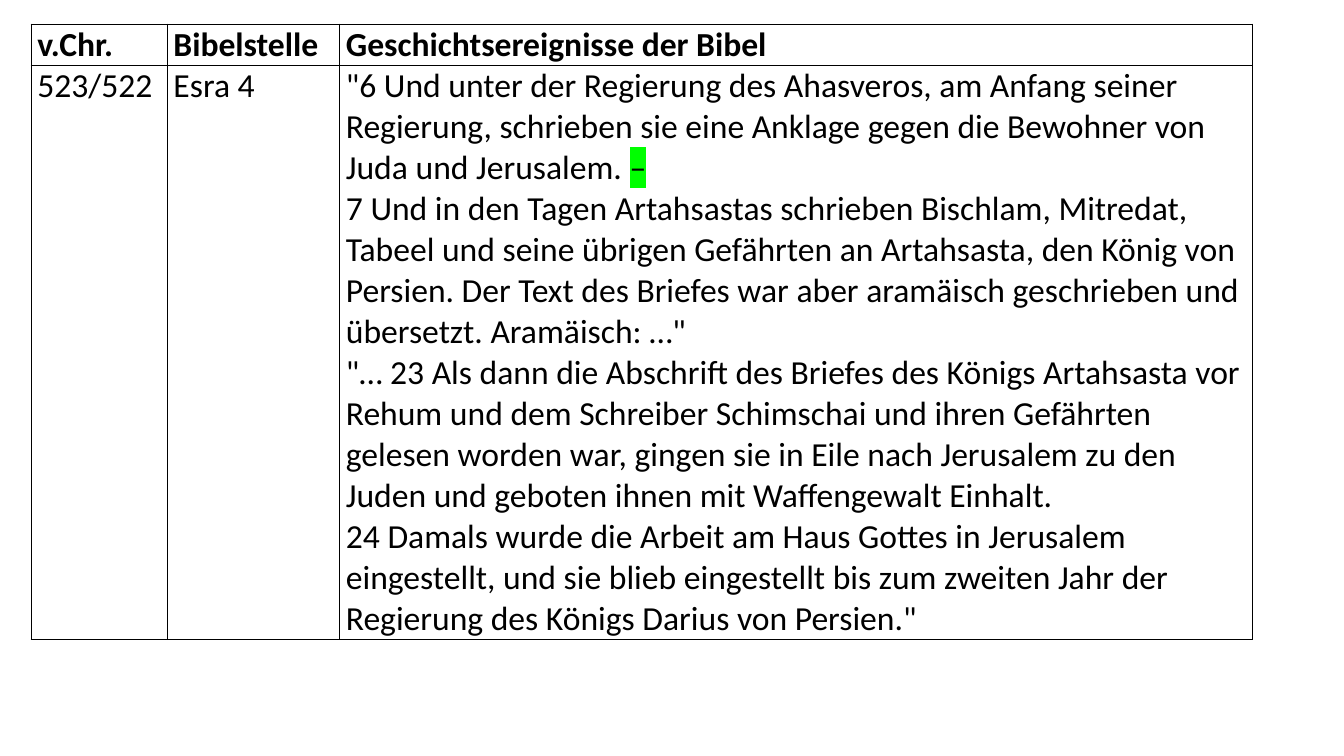
from lxml.etree import SubElement
from pptx import Presentation
from pptx.dml.color import RGBColor
from pptx.oxml.ns import qn
from pptx.util import Inches, Pt

HEADINGS = ["v.Chr.", "Bibelstelle", "Geschichtsereignisse der Bibel"]
VERSES = [
    "\"6 Und unter der Regierung des Ahasveros, am Anfang seiner Regierung, "
    "schrieben sie eine Anklage gegen die Bewohner von Juda und Jerusalem. ",
    "7 Und in den Tagen Artahsastas schrieben Bischlam, Mitredat, Tabeel und "
    "seine übrigen Gefährten an Artahsasta, den König von Persien. Der Text des "
    "Briefes war aber aramäisch geschrieben und übersetzt. Aramäisch: …\"",
    "\"… 23 Als dann die Abschrift des Briefes des Königs Artahsasta vor Rehum "
    "und dem Schreiber Schimschai und ihren Gefährten gelesen worden war, gingen "
    "sie in Eile nach Jerusalem zu den Juden und geboten ihnen mit Waffengewalt "
    "Einhalt.",
    "24 Damals wurde die Arbeit am Haus Gottes in Jerusalem eingestellt, und sie "
    "blieb eingestellt bis zum zweiten Jahr der Regierung des Königs Darius von "
    "Persien.\"",
]
EVENTS = ["523/522", "Esra 4", "\n".join(VERSES)]


def color(value):
    return RGBColor.from_string(value)


class SlideBuilder:
    font_name = "Calibri"
    font_size = Pt(24)
    ink = "000000"
    paper = "FFFFFF"
    marker = "00FF00"

    def __init__(self, presentation):
        self.width = presentation.slide_width
        self.height = presentation.slide_height
        self.slide = presentation.slides.add_slide(presentation.slide_layouts[6])

    def across(self, percent):
        return round(self.width * percent / 100)

    def down(self, percent):
        return round(self.height * percent / 100)

    def table(self, left, top, widths, heights, rows):
        shape = self.slide.shapes.add_table(
            len(rows), len(widths), self.across(left), self.down(top),
            self.across(sum(widths)), self.down(sum(heights)))
        table = shape.table
        for column, width in zip(table.columns, widths):
            column.width = self.across(width)
        for row, height in zip(table.rows, heights):
            row.height = self.down(height)
        for row_index, texts in enumerate(rows):
            for column_index, text in enumerate(texts):
                self.cell(table.cell(row_index, column_index), text, row_index == 0)
        return table

    def cell(self, cell, text, bold):
        cell.margin_left = cell.margin_right = Inches(0.06)
        cell.margin_top = cell.margin_bottom = 0
        self.borders(cell)
        cell.fill.solid()
        cell.fill.fore_color.rgb = color(self.paper)
        cell.text_frame.text = text
        for paragraph in cell.text_frame.paragraphs:
            for run in paragraph.runs:
                self.style(run, bold)

    def borders(self, cell):
        properties = cell._tc.get_or_add_tcPr()
        for side in ("a:lnL", "a:lnR", "a:lnT", "a:lnB"):
            line = SubElement(properties, qn(side), w=str(Pt(1)))
            fill = SubElement(line, qn("a:solidFill"))
            SubElement(fill, qn("a:srgbClr"), val=self.ink)

    def style(self, run, bold):
        run.font.name = self.font_name
        run.font.size = self.font_size
        run.font.bold = bold
        run.font.color.rgb = color(self.ink)

    def highlighted_run(self, paragraph, text):
        run = paragraph.add_run()
        run.text = text
        self.style(run, False)
        properties = run._r.get_or_add_rPr()
        highlight = SubElement(properties, qn("a:highlight"))
        SubElement(highlight, qn("a:srgbClr"), val=self.marker)
        properties.find(qn("a:solidFill")).addnext(highlight)


def main():
    presentation = Presentation()
    presentation.slide_width = Inches(13.33)
    presentation.slide_height = Inches(7.5)
    builder = SlideBuilder(presentation)
    table = builder.table(
        left=2.33, top=3.2, widths=[10.13, 12.83, 67.89], heights=[5.4, 75.9],
        rows=[HEADINGS, EVENTS])
    first_verse = table.cell(1, 2).text_frame.paragraphs[0]
    builder.highlighted_run(first_verse, "–")
    presentation.save("out.pptx")


if __name__ == "__main__":
    main()
